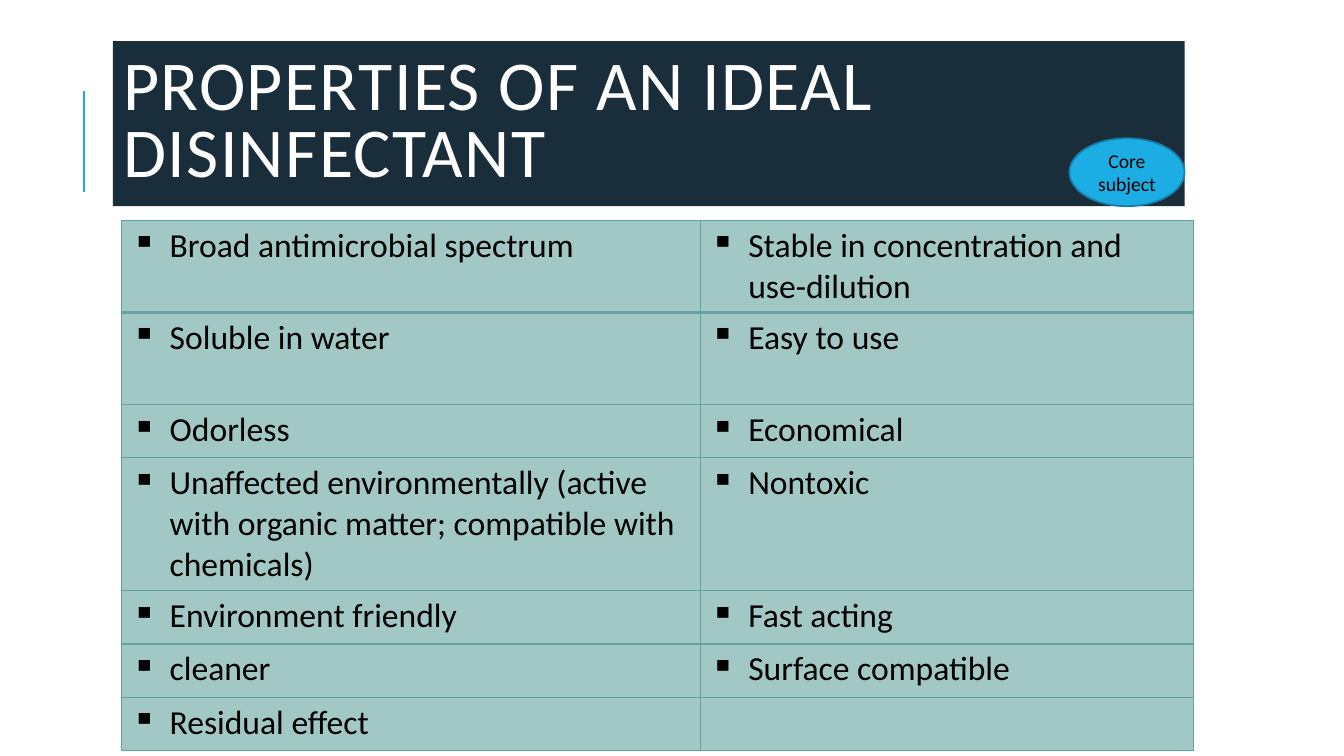
import pptx
import pptx.util
import pptx.dml.color
import pptx.enum.shapes
import pptx.enum.text
import pptx.oxml
import pptx.oxml.ns
from lxml import etree

Pt = pptx.util.Pt
ALIGN = pptx.enum.text.PP_ALIGN
ANCHOR = pptx.enum.text.MSO_ANCHOR
FONT = "Calibri"
COLORS = {
    "banner": "1A2D3A",
    "accent": "1CADE4",
    "badge_line": "1580A9",
    "cell": "A1C8C5",
    "border": "62A39F",
    "light": "FFFFFF",
    "dark": "000000",
}
PROPERTIES = [
    ("Broad antimicrobial spectrum", "Stable in concentration and use-dilution"),
    ("Soluble in water", "Easy to use"),
    ("Odorless", "Economical"),
    ("Unaffected environmentally (active with organic matter; compatible with chemicals)", "Nontoxic"),
    ("Environment friendly", "Fast acting"),
    ("cleaner", "Surface compatible"),
    ("Residual effect", ""),
]
COLUMN_WIDTHS = [413.3, 352.1]
ROW_HEIGHTS = [65.8, 65.8, 38, 95, 38, 38, 38]


def color(name):
    return pptx.dml.color.RGBColor.from_string(COLORS[name])


def paint(shape, name):
    shape.fill.solid()
    shape.fill.fore_color.rgb = color(name)


def format_runs(para, size, name):
    for span in para.runs:
        span.font.name = FONT
        span.font.size = Pt(size)
        span.font.color.rgb = color(name)


def add_accent_line(page, left, top, height):
    line = page.shapes.add_connector(
        pptx.enum.shapes.MSO_CONNECTOR.STRAIGHT,
        Pt(left), Pt(top + height), Pt(left), Pt(top))
    line.line.color.rgb = color("accent")
    line.line.width = Pt(1.5)
    etree.SubElement(line._element.spPr, pptx.oxml.ns.qn("a:effectLst"))


def add_banner(page, left, top, width, height):
    title = page.shapes.title
    title.left, title.top, title.width, title.height = map(Pt, (left, top, width, height))
    paint(title, "banner")
    frame = title.text_frame
    frame.text = "PROPERTIES OF AN IDEAL DISINFECTANT"
    frame.word_wrap = True
    frame.auto_size = pptx.enum.text.MSO_AUTO_SIZE.NONE
    frame.vertical_anchor = ANCHOR.MIDDLE
    para = frame.paragraphs[0]
    para.alignment = ALIGN.LEFT
    para.line_spacing = 0.8
    format_runs(para, 50, "light")
    for span in para.runs:
        span.font._element.set("spc", "100")


def add_bullet(para):
    props = para._p.get_or_add_pPr()
    props.set("marL", str(Pt(27)))
    props.set("indent", str(Pt(-27)))
    etree.SubElement(props, pptx.oxml.ns.qn("a:buChar")).set("char", "▪")


def add_borders(cell, bottom_width):
    props = cell._tc.get_or_add_tcPr()
    widths = {"lnL": 1, "lnR": 1, "lnT": 1, "lnB": bottom_width}
    for position, (side, width) in enumerate(widths.items()):
        props.insert(position, pptx.oxml.parse_xml(
            f'<a:{side} {pptx.oxml.ns.nsdecls("a")} w="{Pt(width)}"><a:solidFill>'
            f'<a:srgbClr val="{COLORS["border"]}"/></a:solidFill></a:{side}>'))


def add_property_table(page, left, top):
    table = page.shapes.add_table(
        len(PROPERTIES), len(COLUMN_WIDTHS), Pt(left), Pt(top),
        Pt(sum(COLUMN_WIDTHS)), Pt(sum(ROW_HEIGHTS))).table
    table.first_row = False
    table.horz_banding = False
    for column, width in zip(table.columns, COLUMN_WIDTHS):
        column.width = Pt(width)
    for index, (row, height, texts) in enumerate(zip(table.rows, ROW_HEIGHTS, PROPERTIES)):
        row.height = Pt(height)
        for cell, text in zip(row.cells, texts):
            paint(cell, "cell")
            add_borders(cell, 2 if index == 0 else 1)
            if text:
                cell.text_frame.text = text
                para = cell.text_frame.paragraphs[0]
                add_bullet(para)
                format_runs(para, 24, "dark")


def add_badge(page, left, top, width, height):
    badge = page.shapes.add_shape(
        pptx.enum.shapes.MSO_SHAPE.OVAL, Pt(left), Pt(top), Pt(width), Pt(height))
    badge.shadow.inherit = False
    paint(badge, "accent")
    badge.line.color.rgb = color("badge_line")
    badge.line.width = Pt(1.25)
    frame = badge.text_frame
    frame.text = "Core subject"
    frame.word_wrap = True
    frame.margin_left = frame.margin_right = Pt(4)
    frame.vertical_anchor = ANCHOR.MIDDLE
    frame.paragraphs[0].alignment = ALIGN.CENTER
    format_runs(frame.paragraphs[0], 14, "dark")


def build_slide(deck):
    page = deck.slides.add_slide(deck.slide_layouts[5])
    add_accent_line(page, 60, 65, 72)
    add_banner(page, 80.7, 29.3, 765.4, 118)
    add_property_table(page, 87, 157.4)
    add_badge(page, 763.9, 98.8, 82.2, 48.5)


def main():
    deck = pptx.Presentation()
    deck.slide_width = Pt(960)
    deck.slide_height = Pt(540)
    build_slide(deck)
    deck.save("out.pptx")


if __name__ == "__main__":
    main()
